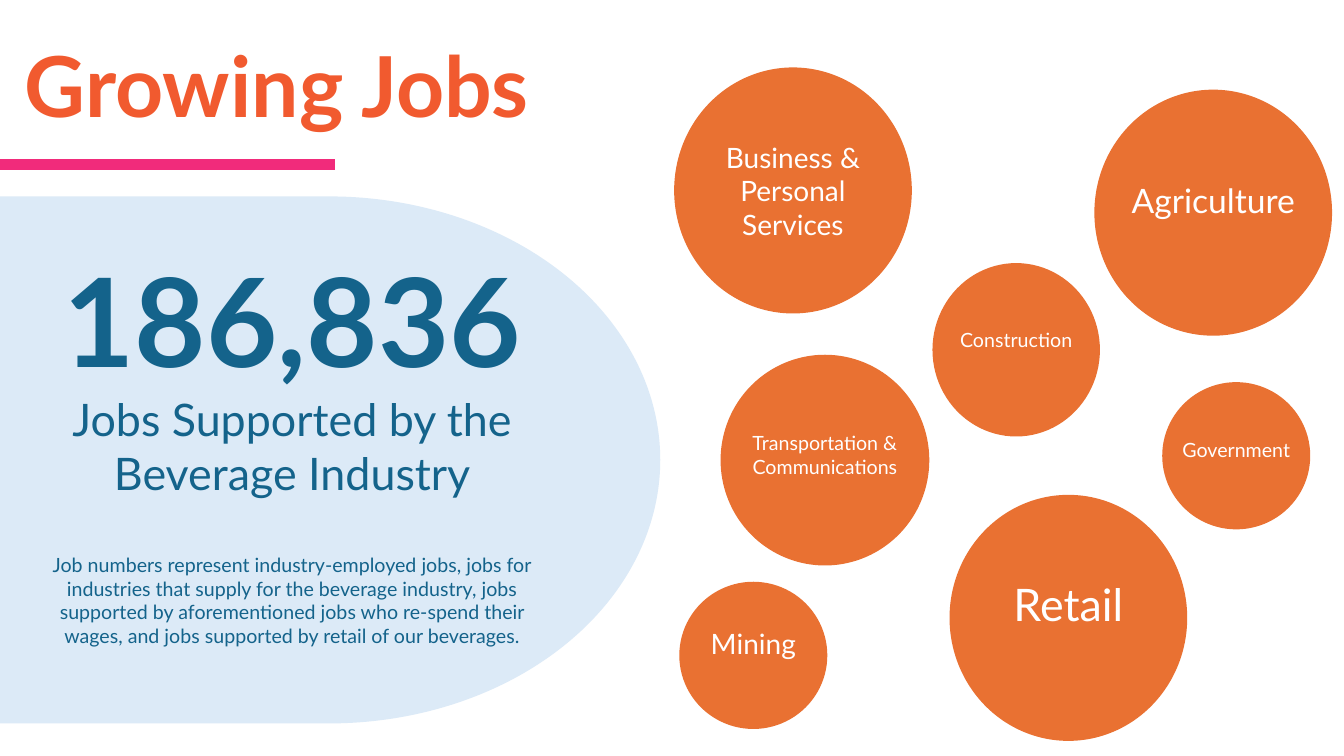
from lxml.etree import SubElement
from pptx import Presentation
from pptx.dml.color import RGBColor
from pptx.enum.shapes import MSO_CONNECTOR, MSO_SHAPE
from pptx.enum.text import MSO_ANCHOR, PP_ALIGN
from pptx.oxml.ns import qn
from pptx.util import Cm, Pt

WHITE, ORANGE, PALE_BLUE = "FFFFFF", "E97132", "DCEAF7"
TEAL, TITLE_ORANGE, PINK = "14638B", "F15A2F", "F12B7B"

# Industry, text size, circle (left, top, width, height),
# label (top, width, height), or None when the text sits in the circle itself
INDUSTRIES = [
    ("Business & Personal Services", 20, (16.99, 1.7, 5.99, 6.2), None),
    ("Construction", 14, (23.5, 6.63, 4.22, 4.37), (8.15, 3.99, 0.99)),
    ("Mining", 20, (17.12, 14.66, 3.73, 3.71), (15.67, 3.51, 1.3)),
    ("Transportation & Communications", 14, (18.16, 8.94, 5.26, 5.31), (10.74, 5.26, 1.68)),
    ("Retail", 32, (23.93, 12.47, 5.99, 6.2), (14.4, 4.19, 1.88)),
    ("Agriculture", 24, (27.58, 2.26, 5.99, 6.2), (4.42, 5.87, 1.5)),
    ("Government", 14, (29.29, 9.63, 3.73, 3.71), (10.9, 4.19, 0.99)),
]

JOBS_NOTE = (
    "Job numbers represent industry-employed jobs, jobs for industries that supply "
    "for the beverage industry, jobs supported by aforementioned jobs who re-spend "
    "their wages, and jobs supported by retail of our beverages."
)


def rgb(value):
    return RGBColor.from_string(value)


def apply_format(target, formats):
    for name, value in formats.items():
        setattr(target, name, value)


def write_paragraph(paragraph, text, size, color, bold=False, **layout):
    paragraph.text = text
    apply_format(paragraph, {"alignment": PP_ALIGN.CENTER, **layout})
    apply_format(paragraph.font, {"name": "Lato", "size": Pt(size), "bold": bold})
    paragraph.font.color.rgb = rgb(color)


def add_filled_shape(slide, kind, box, color):
    shape = slide.shapes.add_shape(kind, *map(Cm, box))
    shape.fill.solid()
    shape.fill.fore_color.rgb = rgb(color)
    shape.line.fill.background()
    shape.shadow.inherit = False
    return shape


def add_text_frame(slide, box, anchor=MSO_ANCHOR.TOP):
    frame = slide.shapes.add_textbox(*map(Cm, box)).text_frame
    apply_format(frame, {"word_wrap": True, "vertical_anchor": anchor})
    return frame


def add_rule(slide, start, end, color, width):
    rule = slide.shapes.add_connector(MSO_CONNECTOR.STRAIGHT, *map(Cm, start + end))
    rule.line.color.rgb = rgb(color)
    rule.line.width = Pt(width)
    SubElement(rule._element.spPr, qn("a:effectLst"))


def add_industry(slide, industry, size, circle_box, label):
    """Draw a circle with its label centred across it."""
    circle = add_filled_shape(slide, MSO_SHAPE.FLOWCHART_CONNECTOR, circle_box, ORANGE)
    frame = circle.text_frame
    if label:
        top, width, height = label
        left = circle_box[0] + (circle_box[2] - width) / 2
        frame = add_text_frame(slide, (left, top, width, height))
    write_paragraph(frame.paragraphs[0], industry, size, WHITE)


def add_job_total(slide):
    add_filled_shape(slide, MSO_SHAPE.FLOWCHART_DELAY, (-0.05, 4.95, 16.69, 13.28), PALE_BLUE)
    frame = add_text_frame(slide, (0.99, 6.02, 12.75, 11.13))
    write_paragraph(frame.paragraphs[0], "186,836", 88, TEAL, bold=True)
    write_paragraph(frame.add_paragraph(), "Jobs Supported by the Beverage Industry", 32, TEAL)
    write_paragraph(frame.add_paragraph(), JOBS_NOTE, 14, TEAL, space_before=Pt(38.4))


def add_title(slide):
    frame = add_text_frame(slide, (0.38, 0.43, 31.8, 3.68), MSO_ANCHOR.MIDDLE)
    write_paragraph(frame.paragraphs[0], "Growing Jobs", 60, TITLE_ORANGE, bold=True,
                    alignment=PP_ALIGN.LEFT, line_spacing=0.9)
    add_rule(slide, (8.43, 4.14), (-0.28, 4.14), PINK, 8)


def main():
    deck = Presentation()
    apply_format(deck, {"slide_width": Cm(33.87), "slide_height": Cm(19.05)})
    slide = deck.slides.add_slide(deck.slide_layouts[6])
    add_job_total(slide)
    for industry in INDUSTRIES:
        add_industry(slide, *industry)
    add_title(slide)
    deck.save("out.pptx")


if __name__ == "__main__":
    main()
